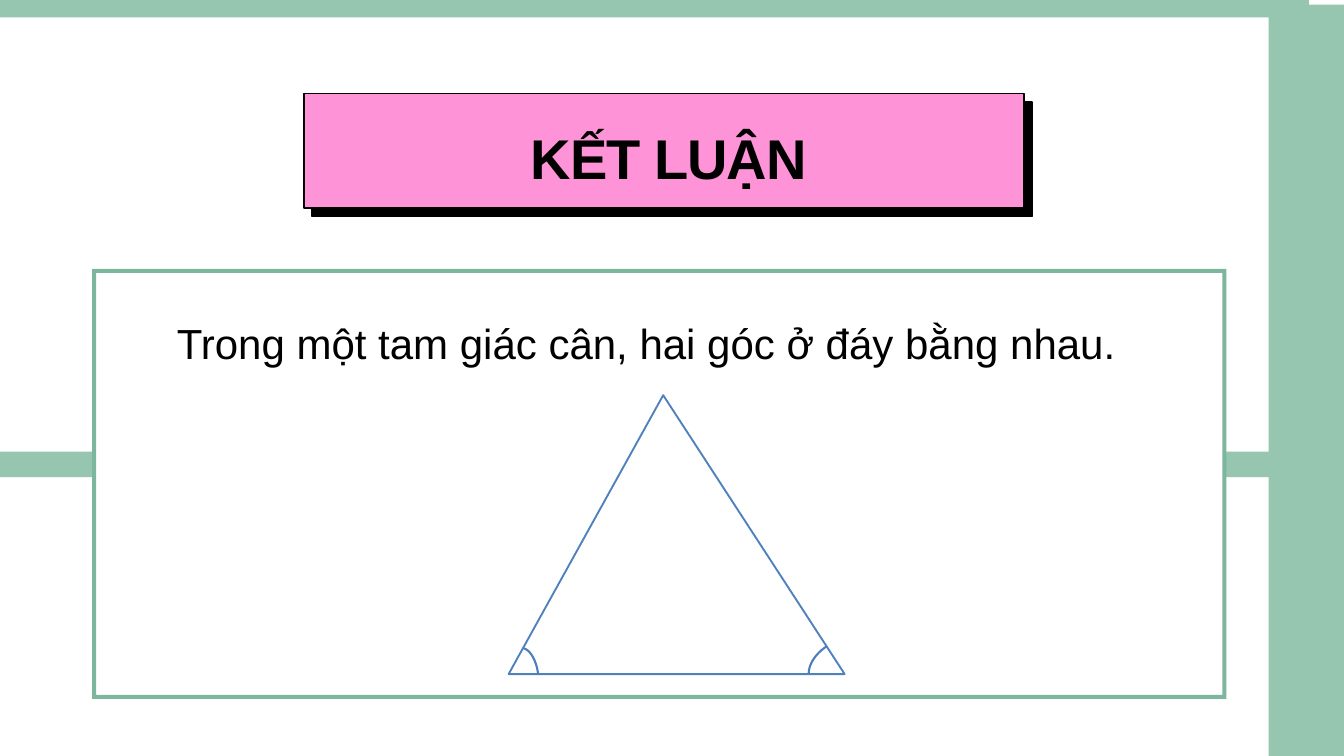
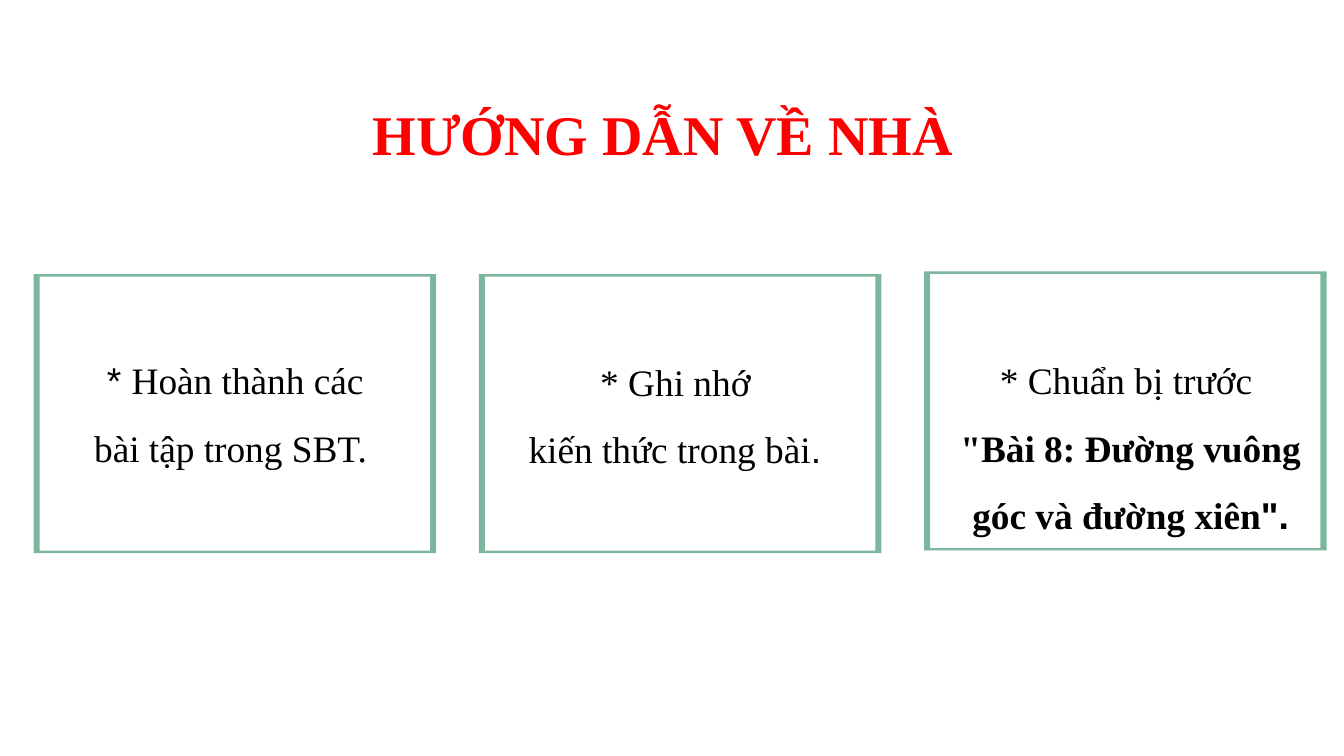
from dataclasses import dataclass
from lxml.etree import SubElement
from pptx import Presentation
from pptx.dml.color import RGBColor
from pptx.enum.shapes import MSO_SHAPE
from pptx.enum.text import MSO_ANCHOR, MSO_AUTO_SIZE, PP_ALIGN
from pptx.oxml.ns import qn
from pptx.util import Pt


@dataclass(frozen=True)
class Theme:
    green: str = "7CB79D"
    pink: str = "FF93D8"
    white: str = "FFFFFF"
    black: str = "000000"
    red: str = "FF0000"
    edge: str = "4F81BD"
    arc: str = "4B7EBC"
    sans: str = "Arial"
    serif: str = "Times New Roman"
    title: int = 60
    body: int = 45
    card: int = 40


T = Theme()
WIDE, HIGH = 1440, 810

# Content: each paragraph is a list of (text, font, bold) runs
RESULT = [[("KẾT LUẬN", T.sans, True)]]
RULE = [[("Trong một tam giác cân, hai góc ở đáy bằng nhau.", T.sans, False)]]
HOME = [[("HƯỚNG DẪN VỀ NHÀ", T.serif, True)]]

# Cards: top of frame, text box, space around paragraphs, paragraphs
CARDS = [
    (293.8, (78.5, 355.7, 347, 144), 6,
     [[("* ", T.sans, False), ("Hoàn thành các bài tập trong SBT. ", T.serif, False)]]),
    (293.8, (540, 357.1, 377.3, 144), 0,
     [[("* Ghi nhớ ", T.serif, False)],
      [("kiến thức trong bài", T.serif, False), (". ", T.sans, False)]]),
    (290.9, (992.9, 355.7, 437, 216.7), 0,
     [[("* Chuẩn bị trước ", T.serif, False)],
      [('"Bài 8: Đường vuông góc và đường xiên', T.serif, True), ('".', T.sans, True)]]),
]

# Grid lines behind the conclusion
GRID = [(0, 0), (1402.5, 0), (1402.5, 5), (WIDE, 5), (WIDE, HIGH), (1359.4, HIGH),
        (1359.4, 511.2), (0, 511.2), (0, 483.8), (1359.4, 483.8), (1359.4, 18.7), (0, 18.7)]

# Angle marks: box, rotation, start and end angle
MARKS = [((546.5, 694.1, 30.2, 59.8), 353, (164.74, 0)),
         ((874.8, 678.2, 41.8, 65.5), 234, (171.5, 4.4))]


def rgb(hue):
    return RGBColor.from_string(hue)


def paint(shape, fill=None, line=None, width=0):
    shape.shadow.inherit = False
    if fill:
        shape.fill.solid()
        shape.fill.fore_color.rgb = rgb(fill)
    else:
        shape.fill.background()
    if line:
        shape.line.color.rgb = rgb(line)
        shape.line.width = Pt(width)
    else:
        shape.line.fill.background()
    return shape


def draw(slide, kind, box, *look):
    return paint(slide.shapes.add_shape(kind, *map(Pt, box)), *look)


def trace(slide, loops, fill):
    """Fill one outline; later loops cut holes."""
    loops = [[(Pt(x), Pt(y)) for x, y in loop] for loop in loops]
    pen = slide.shapes.build_freeform(*loops[0][0])
    pen.add_line_segments(loops[0][1:], close=True)
    for loop in loops[1:]:
        pen.move_to(*loop[0])
        pen.add_line_segments(loop[1:], close=True)
    return paint(pen.convert_to_shape(), fill)


def frame(slide, box, side, rim):
    """White panel with green bars: side wide at left and right, rim at top and foot."""
    x, y, w, h = box
    r, b = x + w, y + h
    draw(slide, MSO_SHAPE.RECTANGLE, (x + side / 2, y + rim / 2, w - side, h - rim), T.white)
    outer = [(x, y), (r, y), (r, b), (x, b)]
    inner = [(x + side, y + rim), (x + side, b - rim), (r - side, b - rim), (r - side, y + rim)]
    trace(slide, [outer, inner], T.green)


def write(slide, shape, box, paras, size, align, hue=T.black, lead=1.0, gap=(0, 0), inset=None, track=0):
    shape.left, shape.top, shape.width, shape.height = map(Pt, box)
    slide.shapes._spTree.append(shape._element)
    text = shape.text_frame
    text.word_wrap = True
    text.auto_size = MSO_AUTO_SIZE.NONE
    text.vertical_anchor = MSO_ANCHOR.TOP
    if inset is not None:
        text.margin_left = text.margin_right = text.margin_top = text.margin_bottom = Pt(inset)
    for i, runs in enumerate(paras):
        para = text.add_paragraph() if i else text.paragraphs[0]
        para.alignment, para.line_spacing = align, lead
        para.space_before, para.space_after = map(Pt, gap)
        for words, face, bold in runs:
            run = para.add_run()
            run.text = words
            font = run.font
            font.name, font.size, font.bold = face, Pt(size), bold
            font.color.rgb = rgb(hue)
            if track:
                run._r.get_or_add_rPr().set("spc", str(track))


def conclude(deck):
    slide = deck.slides.add_slide(deck.slide_layouts[1])
    # Grid and panel
    grid = trace(slide, [GRID], T.green)
    tint = grid._element.spPr.find(qn("a:solidFill"))[0]
    SubElement(tint, qn("a:alpha")).set("val", "80000")
    frame(slide, (98.6, 288, 1215.4, 460.8), 4.3, 4.3)
    # Title plate with hard shadow
    for shift, fill in ((9, T.black), (0, T.pink)):
        draw(slide, MSO_SHAPE.RECTANGLE, (325.6 + shift, 100.3 + shift, 771.5, 122.8),
             fill, T.black, 1.8)
    write(slide, slide.shapes.title, (385.9, 114.5, 661, 82.1), RESULT, T.title,
          PP_ALIGN.CENTER, lead=Pt(90), inset=0, track=-110)
    # Statement
    body = slide.placeholders[1]
    write(slide, body, (182.2, 309.6, 1085.8, 79.9), RULE, T.body,
          PP_ALIGN.JUSTIFY, lead=1.5, gap=(0, 8))
    props = body.text_frame.paragraphs[0]._p.get_or_add_pPr()
    props.set("marL", "0")
    props.set("indent", "0")
    SubElement(props, qn("a:buNone"))
    # Triangle with equal base angles
    peak = draw(slide, MSO_SHAPE.ISOSCELES_TRIANGLE, (545, 423.4, 360, 298.8), T.white, T.edge, 2)
    peak.adjustments[0] = 0.46
    for box, turn, ends in MARKS:
        mark = draw(slide, MSO_SHAPE.ARC, box, None, T.arc, 2.25)
        mark.rotation = turn
        mark.adjustments[0], mark.adjustments[1] = ends


def assign(deck):
    slide = deck.slides.add_slide(deck.slide_layouts[5])
    write(slide, slide.shapes.title, (349.9, 103, 678.2, 79.9), HOME, T.title,
          PP_ALIGN.RIGHT, hue=T.red)
    # Three cards at equal steps
    for i, (top, box, gap, paras) in enumerate(CARDS):
        frame(slide, (36 + 477 * i, top, 431.3, 298.8), 6.5, 2.5)
        note = slide.shapes.add_textbox(*map(Pt, box))
        write(slide, note, box, paras, T.card, PP_ALIGN.CENTER, lead=1.5, gap=(gap, gap))


def main():
    deck = Presentation()
    deck.slide_width, deck.slide_height = Pt(WIDE), Pt(HIGH)
    conclude(deck)
    assign(deck)
    deck.save("out.pptx")


if __name__ == "__main__":
    main()
